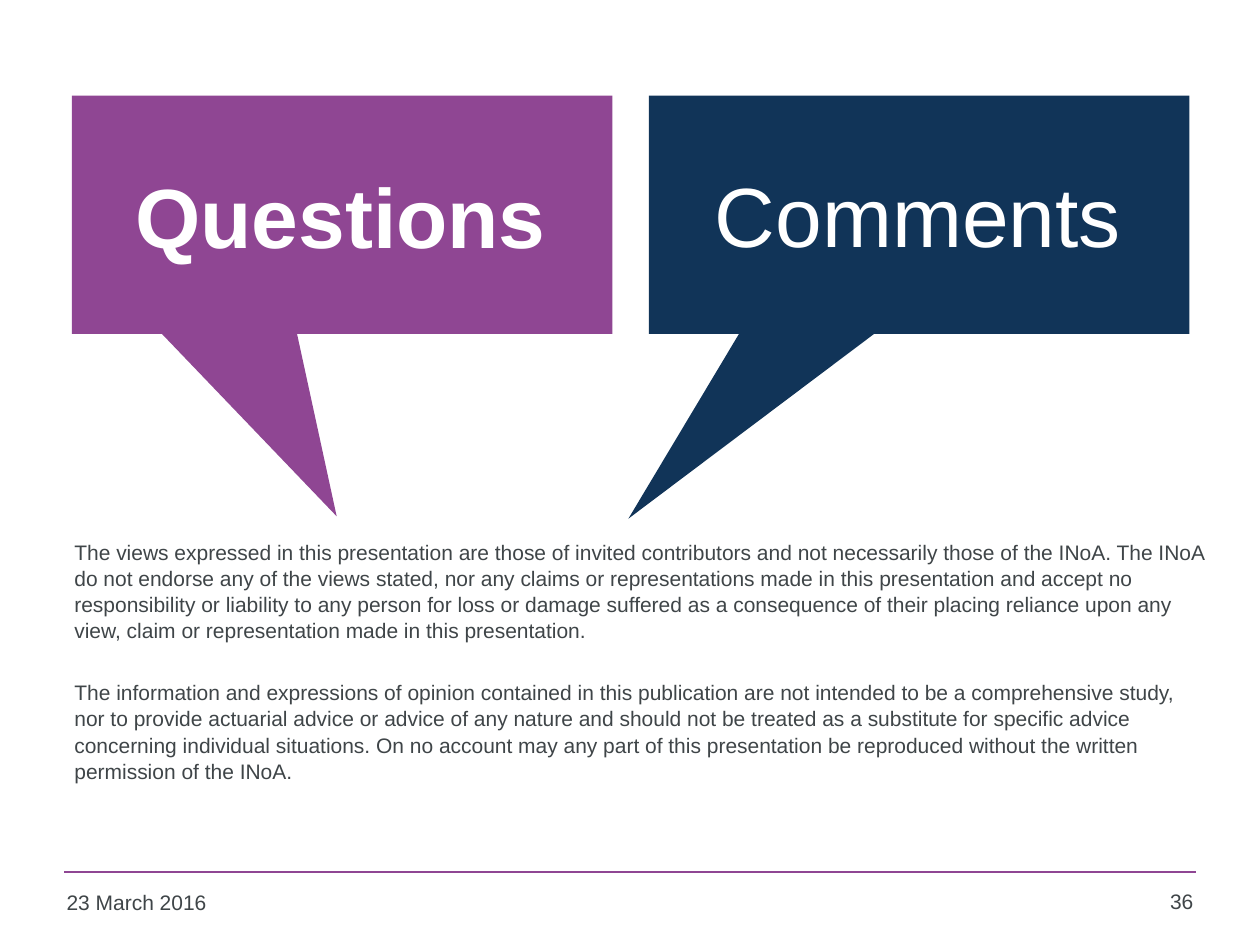
from dataclasses import dataclass

from lxml.etree import SubElement
from pptx import Presentation
from pptx.dml.color import RGBColor
from pptx.enum.shapes import MSO_CONNECTOR, MSO_SHAPE
from pptx.enum.text import MSO_ANCHOR, MSO_AUTO_SIZE, PP_ALIGN
from pptx.oxml.ns import qn
from pptx.util import Inches, Pt


@dataclass(frozen=True)
class Theme:
    font: str = "Arial"
    purple: RGBColor = RGBColor(0x8F, 0x46, 0x93)
    navy: RGBColor = RGBColor(0x11, 0x34, 0x58)
    grey: RGBColor = RGBColor(0x3F, 0x45, 0x48)
    white: RGBColor = RGBColor(0xFF, 0xFF, 0xFF)
    heading_size: Pt = Pt(48)
    text_size: Pt = Pt(12)


theme = Theme()


def place(shape, left, top, width, height):
    shape.left, shape.top = Inches(left), Inches(top)
    shape.width, shape.height = Inches(width), Inches(height)


def write(shape, paragraphs, anchor, font_format, paragraph_format):
    frame = shape.text_frame
    frame.text = "\n".join(paragraphs)
    frame.word_wrap = True
    frame.auto_size = MSO_AUTO_SIZE.NONE
    frame.vertical_anchor = anchor
    for paragraph in frame.paragraphs:
        for name, value in paragraph_format.items():
            setattr(paragraph, name, value)
        for run in paragraph.runs:
            run.font.name = theme.font
            run.font.color.rgb = font_format["color"]
            for name in ("size", "bold"):
                setattr(run.font, name, font_format[name])


heading_format = {"size": theme.heading_size, "bold": False, "color": theme.white}
text_format = {"size": theme.text_size, "bold": False, "color": theme.grey}

presentation = Presentation()
presentation.slide_width = Inches(10)
presentation.slide_height = Inches(7.5)
slide = presentation.slides.add_slide(presentation.slide_layouts[1])
shapes = slide.shapes
title, body = slide.placeholders

footer_line = shapes.add_connector(
    MSO_CONNECTOR.STRAIGHT, Inches(0.51), Inches(6.92), Inches(9.49), Inches(6.92)
)
footer_line.line.color.rgb = theme.purple
footer_line.line.width = Pt(1)
SubElement(footer_line.element.spPr, qn("a:effectLst"))

footers = [
    ("23 March 2016", (0.43, 7.01, 2.2, 0.36), PP_ALIGN.LEFT),
    ("36", (8.86, 7, 0.71, 0.37), PP_ALIGN.RIGHT),
]
for text, bounds, alignment in footers:
    footer = shapes.add_textbox(*map(Inches, bounds))
    write(footer, [text], MSO_ANCHOR.TOP, text_format, {"alignment": alignment})

callouts = [
    (0.57, theme.purple, (-0.01, 1.266)),
    (5.15, theme.navy, (-0.538, 1.276)),
]
for left, color, tip in callouts:
    callout = shapes.add_shape(
        MSO_SHAPE.RECTANGULAR_CALLOUT, Inches(left), Inches(0.76), Inches(4.29), Inches(1.89)
    )
    callout.adjustments[0], callout.adjustments[1] = tip
    callout.fill.solid()
    callout.fill.fore_color.rgb = color
    callout.line.fill.background()
    callout.shadow.inherit = False

comments = shapes.add_textbox(0, 0, 0, 0)
headings = [
    (title, "Questions", (0.78, 1.08, 3.85, 1.25), True),
    (comments, "Comments", (5.36, 1.07, 3.85, 1.25), False),
]
for heading, text, bounds, bold in headings:
    place(heading, *bounds)
    write(heading, [text], MSO_ANCHOR.MIDDLE, heading_format | {"bold": bold},
          {"alignment": PP_ALIGN.CENTER})

disclaimers = [
    "The views expressed in this presentation are those of invited contributors and not "
    "necessarily those of the INoA. The INoA do not endorse any of the views stated, nor any "
    "claims or representations made in this presentation and accept no responsibility or "
    "liability to any person for loss or damage suffered as a consequence of their placing "
    "reliance upon any view, claim or representation made in this presentation.",
    "The information and expressions of opinion contained in this publication are not intended "
    "to be a comprehensive study, nor to provide actuarial advice or advice of any nature and "
    "should not be treated as a substitute for specific advice concerning individual "
    "situations. On no account may any part of this presentation be reproduced without the "
    "written permission of the INoA.",
]
place(body, 0.49, 4.22, 9.19, 2.66)
write(body, disclaimers, MSO_ANCHOR.TOP, text_format,
      {"alignment": PP_ALIGN.LEFT, "line_spacing": 1.04, "space_before": Pt(0)})
for paragraph in body.text_frame.paragraphs:
    properties = paragraph._p.get_or_add_pPr()
    properties.set("marL", "0")
    properties.set("indent", "0")
    SubElement(properties, qn("a:buNone"))
body.text_frame.paragraphs[1].space_before = Pt(20.5)

for shape in (title, comments, body):
    shapes.element.append(shape.element)

presentation.save("out.pptx")
